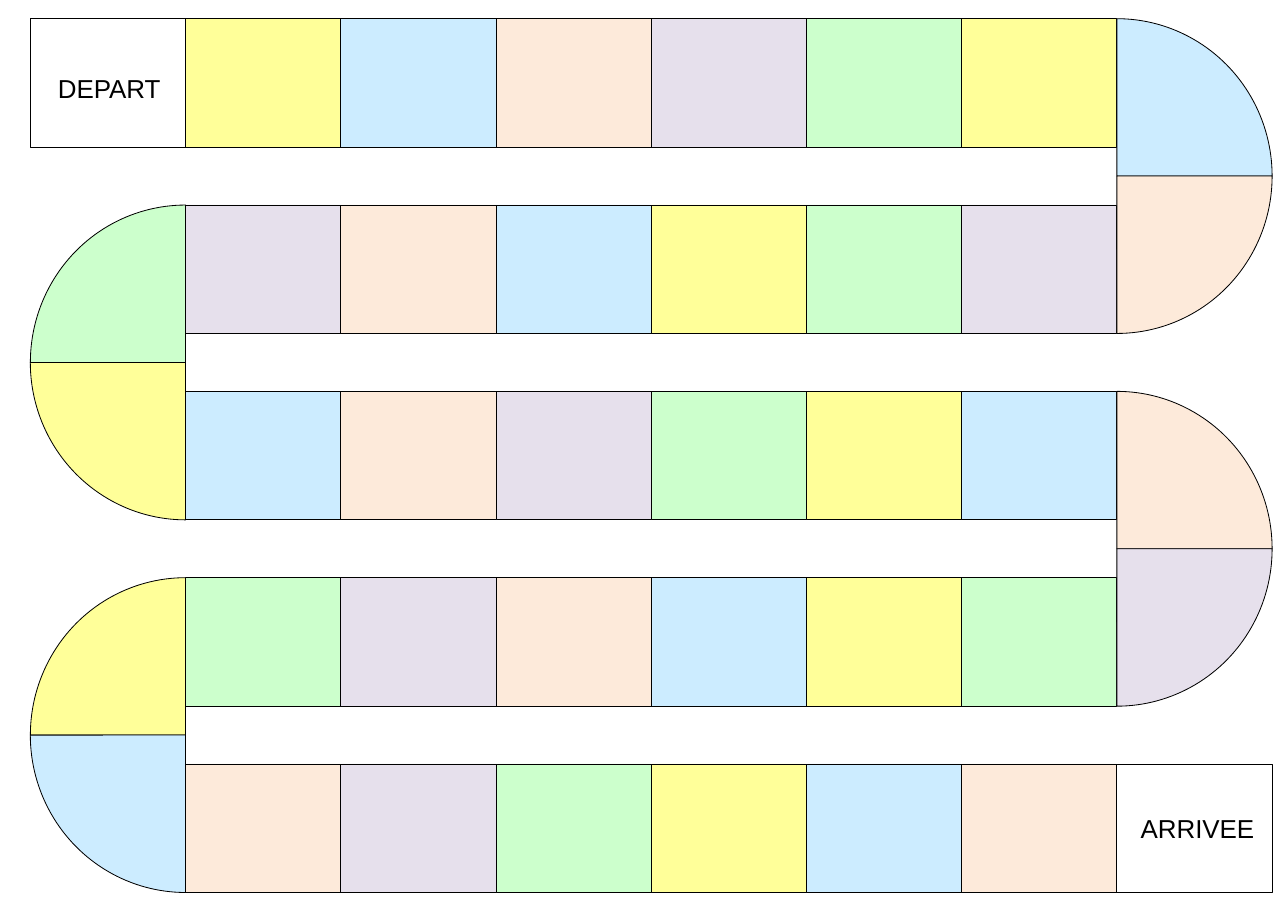
from pptx import Presentation
from pptx.dml.color import RGBColor
from pptx.enum.shapes import MSO_SHAPE as Shape
from pptx.enum.text import MSO_AUTO_SIZE as Fit, PP_ALIGN as Align
from pptx.util import Inches, Pt

COLORS = {
    "Y": "FFFF99",
    "B": "CCECFF",
    "O": "FDEADA",
    "V": "E6E0EC",
    "G": "CCFFCC",
    "ink": "000000",
}
ROWS = ["YBOVGY", "VOBYGV", "BOVGYB", "GVOBYG", "OVGYBO"]
BENDS = ["BO", "GY", "OV", "YB"]  # upper and lower quarter of each turn
# Start and end angles in 100000ths of the 60000-per-degree unit
RIGHT = [(162, 0), (0, 54)]
LEFT = [(108, 162), (54, 108)]

X, Y = 0.26, 0.16
CELL_W, CELL_H = 9.3 / 7, 1.1
STEP = 6.38 / 4


def rgb(key):
    return RGBColor.from_string(COLORS[key])


def add_tile(slide, kind, box, color=None):
    """Add an outlined shape, left unfilled when no color is given."""
    tile = slide.shapes.add_shape(kind, *map(Inches, box))
    tile.shadow.inherit = False
    if color:
        tile.fill.solid()
        tile.fill.fore_color.rgb = rgb(color)
    else:
        tile.fill.background()
    tile.line.color.rgb = rgb("ink")
    tile.line.width = Pt(0.5)
    return tile


def add_row(slide, left, top, colors):
    for col, color in enumerate(colors):
        box = (left + col * CELL_W, top, CELL_W, CELL_H)
        add_tile(slide, Shape.RECTANGLE, box, color)


def add_bend(slide, left, top, colors, angles):
    """Join two rows with two quarter discs."""
    box = (left, top, 2 * CELL_W, STEP + CELL_H)
    for color, (start, end) in zip(colors, angles):
        pie = add_tile(slide, Shape.PIE, box, color)
        pie.adjustments[0] = start
        pie.adjustments[1] = end


def add_label(slide, box, text):
    frame = slide.shapes.add_textbox(*map(Inches, box)).text_frame
    frame.word_wrap = False
    frame.auto_size = Fit.SHAPE_TO_FIT_TEXT
    para = frame.paragraphs[0]
    para.text = text
    para.alignment = Align.CENTER
    para.font.name = "Arial"
    para.font.size = Pt(16)
    para.font.color.rgb = rgb("ink")


def add_board(slide, left, top):
    for row, colors in enumerate(ROWS):
        add_row(slide, left + CELL_W, top + row * STEP, colors)
    for row, colors in enumerate(BENDS):
        on_left = row % 2
        x = left if on_left else left + 6 * CELL_W
        add_bend(slide, x, top + row * STEP, colors,
                 LEFT if on_left else RIGHT)

    goal_x, goal_y = left + 7 * CELL_W, top + 4 * STEP
    for x, y in [(left, top), (goal_x, goal_y)]:
        add_tile(slide, Shape.RECTANGLE, (x, y, CELL_W, CELL_H))
    add_label(slide, (left, top + 0.41, 1.35, 0.37), "DEPART")
    add_label(slide, (goal_x - 0.05, goal_y + 0.37, 1.48, 0.37), "ARRIVEE")


def main():
    deck = Presentation()
    deck.slide_width, deck.slide_height = Pt(793.75), Pt(567)
    slide = deck.slides.add_slide(deck.slide_layouts[6])
    add_board(slide, X, Y)
    deck.save("out.pptx")


if __name__ == "__main__":
    main()
